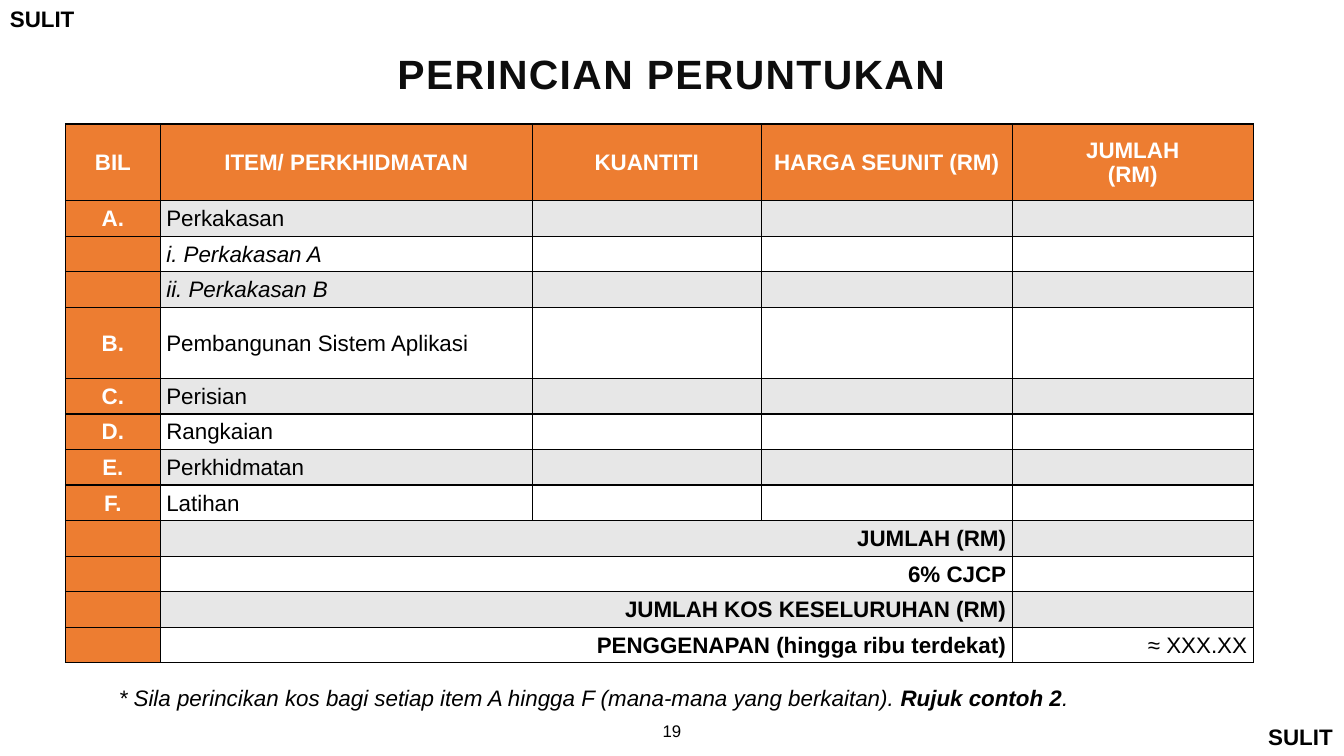
import pptx
import pptx.dml.color
import pptx.enum.text
import pptx.oxml.ns
import pptx.util
from lxml import etree

Inches = pptx.util.Inches
Pt = pptx.util.Pt
ALIGN = pptx.enum.text.PP_ALIGN
ANCHOR = pptx.enum.text.MSO_ANCHOR
SIZING = pptx.enum.text.MSO_AUTO_SIZE

COLORS = {"orange": "ED7D31", "gray": "E7E7E7", "white": "FFFFFF",
          "black": "000000", "title": "0D0D0D"}

HEADERS = ["BIL", "ITEM/ PERKHIDMATAN", "KUANTITI", "HARGA SEUNIT (RM)", "JUMLAH\n(RM)"]
ITEMS = [
    ("A.", "Perkakasan"),
    ("", "i. Perkakasan A"),
    ("", "ii. Perkakasan B"),
    ("B.", "Pembangunan Sistem Aplikasi"),
    ("C.", "Perisian"),
    ("D.", "Rangkaian"),
    ("E.", "Perkhidmatan"),
    ("F.", "Latihan"),
]
TOTALS = [
    ("JUMLAH (RM)", ""),
    ("6% CJCP", ""),
    ("JUMLAH KOS KESELURUHAN (RM)", ""),
    ("PENGGENAPAN (hingga ribu terdekat)", "≈ XXX.XX"),
]
NOTE = [
    ("* Sila perincikan kos bagi setiap item A hingga F (mana-mana yang berkaitan). ", {"italic": True}),
    ("Rujuk contoh 2", {"italic": True, "bold": True}),
    (".", {"italic": True}),
]
MARK = [("SULIT", {"bold": True})]
TEXTS = [
    (MARK, (0, 0, 0.85, 0.37), {}),
    (MARK, (12.48, 7.13, 0.85, 0.37), {}),
    ([("PERINCIAN PERUNTUKAN", {"bold": True, "size": 29.2, "color": "title", "spacing": 1})],
     (3.15, 0.47, 7.02, 0.6),
     {"wrap": True, "anchor": ANCHOR.MIDDLE, "align": ALIGN.CENTER, "line_spacing": 0.8}),
    (NOTE, (1.08, 6.74, 9.73, 0.37), {}),
    ([("19", {"size": 12})], (6.4, 7.1, 0.53, 0.4), {"wrap": True, "align": ALIGN.CENTER}),
]

TABLE_BOX = (0.65, 1.23, 11.77, 5.35)
COLUMN_WIDTHS = [0.94, 3.69, 2.27, 2.49, 2.39]
HEADER_HEIGHT = 0.76
TALL_ROW = 4
CELL_FORMAT = {"margin_left": Inches(0.06), "margin_right": Inches(0.06),
               "margin_top": Inches(0.01), "margin_bottom": 0,
               "vertical_anchor": ANCHOR.MIDDLE}


def apply(target, values):
    for name, value in values.items():
        setattr(target, name, value)


def rgb(name):
    return pptx.dml.color.RGBColor.from_string(COLORS[name])


def add_span(para, text, size=16, color="black", bold=False, italic=False, spacing=0):
    span = para.add_run()
    span.text = text
    apply(span.font, {"name": "Arial", "size": Pt(size), "bold": bold, "italic": italic})
    span.font.color.rgb = rgb(color)
    if spacing:
        span.font._element.set("spc", str(spacing * 100))


def add_text(page, spans, place, style):
    box = page.shapes.add_textbox(*map(Inches, place))
    frame = box.text_frame
    wrap = style.get("wrap", False)
    apply(frame, {"word_wrap": wrap,
                  "auto_size": SIZING.NONE if wrap else SIZING.SHAPE_TO_FIT_TEXT,
                  "vertical_anchor": style.get("anchor", ANCHOR.TOP)})
    para = frame.paragraphs[0]
    apply(para, {"alignment": style.get("align", ALIGN.LEFT),
                 "line_spacing": style.get("line_spacing", 1.0)})
    for text, font in spans:
        add_span(para, text, **font)


def add_borders(cell):
    properties = cell._tc.get_or_add_tcPr()
    for index, side in enumerate(("lnL", "lnR", "lnT", "lnB")):
        line = etree.Element(pptx.oxml.ns.qn("a:" + side), w=str(Pt(1)))
        fill = etree.SubElement(line, pptx.oxml.ns.qn("a:solidFill"))
        etree.SubElement(fill, pptx.oxml.ns.qn("a:srgbClr"), val=COLORS["black"])
        properties.insert(index, line)


def fill_cell(cell, text, fill, align, space_after=0, **font):
    apply(cell, CELL_FORMAT)
    cell.fill.solid()
    cell.fill.fore_color.rgb = rgb(fill)
    add_borders(cell)
    if not text:
        return
    for index, line in enumerate(text.split("\n")):
        frame = cell.text_frame
        para = frame.add_paragraph() if index else frame.paragraphs[0]
        apply(para, {"alignment": align, "space_after": Pt(space_after)})
        add_span(para, line, **font)


def add_cost_table(page):
    rows = [HEADERS]
    rows += [(mark, item, "", "", "") for mark, item in ITEMS]
    rows += [("", label, "", "", amount) for label, amount in TOTALS]
    table = page.shapes.add_table(len(rows), len(HEADERS), *map(Inches, TABLE_BOX)).table
    for column, width in zip(table.columns, COLUMN_WIDTHS):
        column.width = Inches(width)
    unit = (TABLE_BOX[3] - HEADER_HEIGHT) / len(rows)
    first_total = len(rows) - len(TOTALS)
    for r, texts in enumerate(rows):
        table.rows[r].height = Inches(HEADER_HEIGHT if r == 0 else unit * (2 if r == TALL_ROW else 1))
        total = r >= first_total
        if total:
            table.cell(r, 1).merge(table.cell(r, 3))
        for c, text in enumerate(texts):
            if r == 0 or c == 0:
                after = 10 if r == 0 and "\n" not in text else 0
                look = {"fill": "orange", "align": ALIGN.CENTER, "space_after": after,
                        "color": "white", "bold": True}
            else:
                look = {"fill": "gray" if r % 2 else "white",
                        "align": ALIGN.RIGHT if total else ALIGN.LEFT,
                        "bold": total and c == 1,
                        "italic": not total and not texts[0]}
            fill_cell(table.cell(r, c), text, **look)


def main():
    deck = pptx.Presentation()
    apply(deck, {"slide_width": Inches(13.33), "slide_height": Inches(7.5)})
    page = deck.slides.add_slide(deck.slide_layouts[6])
    add_cost_table(page)
    for spans, place, style in TEXTS:
        add_text(page, spans, place, style)
    deck.save("out.pptx")


if __name__ == "__main__":
    main()
